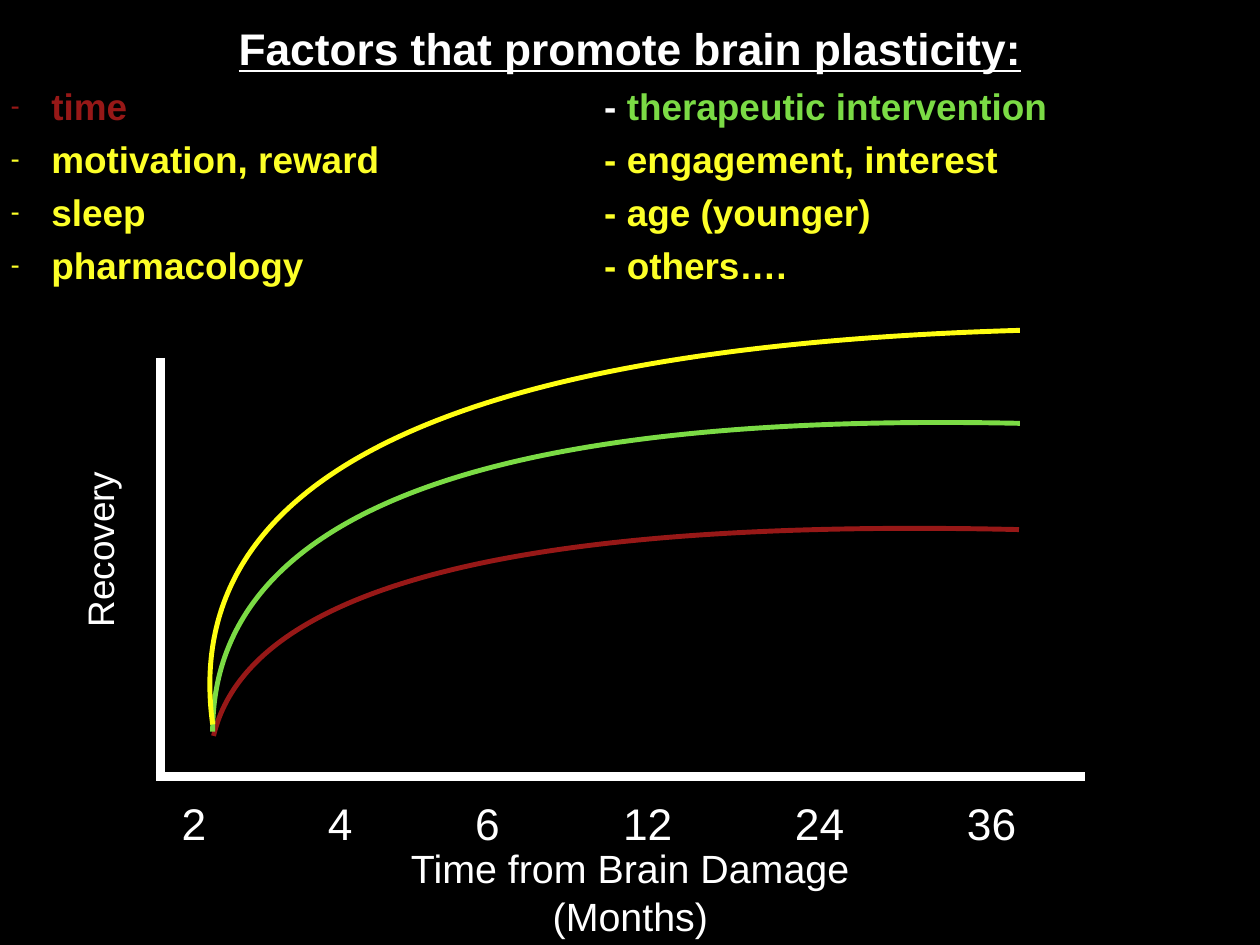
from dataclasses import dataclass

from lxml.etree import SubElement
from pptx import Presentation
from pptx.dml.color import RGBColor
from pptx.enum.shapes import MSO_CONNECTOR
from pptx.enum.text import MSO_ANCHOR, MSO_AUTO_SIZE, PP_ALIGN
from pptx.oxml.ns import qn
from pptx.shapes.autoshape import Shape
from pptx.slide import Slide
from pptx.text.text import TextFrame, _Paragraph, _Run
from pptx.util import Inches, Pt

WHITE = RGBColor(0xFF, 0xFF, 0xFF)
BLACK = RGBColor(0, 0, 0)
RED = RGBColor(0x97, 0x18, 0x17)
GREEN = RGBColor(0x7B, 0xDB, 0x45)
YELLOW = RGBColor(0xFD, 0xFF, 0x28)
LEMON = RGBColor(0xFF, 0xFE, 0x12)

Point = tuple[float, float]


@dataclass
class Factor:
    left: str
    right: str
    hue: RGBColor = YELLOW
    dash: RGBColor = YELLOW
    other: RGBColor = YELLOW


@dataclass
class Label:
    text: str
    box: tuple[float, float, float, float]
    size: int
    turn: int = 0


@dataclass
class Axis:
    start: Point
    end: Point


@dataclass
class Curve:
    start: Point
    bend: tuple[Point, Point]
    end: Point
    hue: RGBColor


FACTORS = [
    Factor("time", "therapeutic intervention", RED, WHITE, GREEN),
    Factor("motivation, reward", "engagement, interest"),
    Factor("sleep", "age (younger)"),
    Factor("pharmacology", "others…."),
]
LABELS = [
    Label("Recovery", (0.18, 5.9, 1.88, 0.61), 30, 270),
    Label("Time from Brain Damage (Months)", (3.64, 9.75, 6.95, 0.64), 32),
]
AXES = [Axis((1.76, 8.77), (12.24, 8.77)), Axis((1.81, 4.04), (1.81, 8.8))]
MONTHS = [2, 4, 6, 12, 24, 36]
STOPS = [1.79, 3.45, 5.26, 7.2, 9.14]
CURVES = [
    Curve((2.41, 8.31), ((2.81, 6.62), (5.84, 5.85)), (11.5, 5.98), RED),
    Curve((2.4, 8.26), ((2.4, 5.81), (5.43, 4.65)), (11.51, 4.78), GREEN),
    Curve((2.4, 8.18), ((2.02, 5.4), (5.05, 3.92)), (11.51, 3.73), LEMON),
]
COLUMN = 6.7
INDENT = 0.46


def add_box(slide: Slide, box: tuple[float, ...], wrap: bool, turn: int = 0) -> TextFrame:
    shape = slide.shapes.add_textbox(*map(Inches, box))
    shape.rotation = turn
    frame = shape.text_frame
    style = dict.fromkeys(
        ("margin_left", "margin_right", "margin_top", "margin_bottom"), Inches(0.06)
    )
    style |= {
        "word_wrap": wrap,
        "auto_size": MSO_AUTO_SIZE.SHAPE_TO_FIT_TEXT,
        "vertical_anchor": MSO_ANCHOR.MIDDLE,
    }
    for name, value in style.items():
        setattr(frame, name, value)
    return frame


def add_run(para: _Paragraph, text: str, size: int, hue: RGBColor, **extra: bool) -> _Run:
    run = para.add_run()
    run.text = text
    style = {"name": "Arial", "size": Pt(size)} | extra
    for name, value in style.items():
        setattr(run.font, name, value)
    run.font.color.rgb = hue
    return run


def add_tabs(para: _Paragraph, stops: list[float], align: str) -> None:
    tabs = SubElement(para._p.get_or_add_pPr(), qn("a:tabLst"))
    for stop in stops:
        SubElement(tabs, qn("a:tab"), pos=str(Inches(stop)), algn=align)


def add_dash(para: _Paragraph) -> None:
    """Give the paragraph a hanging, smaller dash as its bullet."""
    props = para._p.get_or_add_pPr()
    props.set("marL", str(Inches(INDENT)))
    props.set("indent", str(-Inches(INDENT)))
    SubElement(props, qn("a:buSzPct"), val="75000")
    SubElement(props, qn("a:buFont"), typeface="Arial")
    SubElement(props, qn("a:buChar"), char="-")


def add_factors(slide: Slide) -> None:
    frame = add_box(slide, (0.06, 0.12, 14.1, 3.13), True)
    title = frame.paragraphs[0]
    title.alignment = PP_ALIGN.CENTER
    title.line_spacing = 1.2
    add_run(title, "Factors that promote brain plasticity:", 36, WHITE,
            bold=True, underline=True)
    for factor in FACTORS:
        para = frame.add_paragraph()
        para.line_spacing = 1.2
        add_dash(para)
        add_tabs(para, [COLUMN], "l")
        for text, hue in (
            (factor.left, factor.hue),
            ("\t- ", factor.dash),
            (factor.right, factor.other),
        ):
            add_run(para, text, 30, hue, bold=True)


def add_label(slide: Slide, label: Label) -> None:
    para = add_box(slide, label.box, False, label.turn).paragraphs[0]
    para.alignment = PP_ALIGN.CENTER
    add_run(para, label.text, label.size, WHITE)


def add_months(slide: Slide) -> None:
    para = add_box(slide, (1.99, 8.93, 9.58, 0.71), True).paragraphs[0]
    add_tabs(para, STOPS, "ctr")
    add_run(para, "\t".join(map(str, MONTHS)), 36, WHITE)


def add_axis(slide: Slide, axis: Axis) -> None:
    line = slide.shapes.add_connector(
        MSO_CONNECTOR.STRAIGHT, *map(Inches, axis.start + axis.end)
    )
    line.line.color.rgb = WHITE
    line.line.width = Pt(7)
    SubElement(line._element.spPr, qn("a:effectLst"))


def add_curve(slide: Slide, curve: Curve) -> Shape:
    """Draw a straight path, then bend it into one cubic segment."""
    pen = slide.shapes.build_freeform(*map(Inches, curve.start))
    pen.add_line_segments([tuple(map(Inches, curve.end))], close=False)
    shape = pen.convert_to_shape()
    step = next(shape._element.iter(qn("a:lnTo")))
    step.tag = qn("a:cubicBezTo")
    for spot, (x, y) in enumerate(curve.bend):
        mark = step.makeelement(
            qn("a:pt"),
            {"x": str(Inches(x) - shape.left), "y": str(Inches(y) - shape.top)},
        )
        step.insert(spot, mark)
    shape.fill.background()
    shape.line.color.rgb = curve.hue
    shape.line.width = Pt(4)
    shape.shadow.inherit = False
    return shape


def main() -> None:
    deck = Presentation()
    deck.slide_width = Inches(14.22)
    deck.slide_height = Inches(10.67)
    slide = deck.slides.add_slide(deck.slide_layouts[6])
    slide.background.fill.solid()
    slide.background.fill.fore_color.rgb = BLACK
    add_factors(slide)
    for label in LABELS:
        add_label(slide, label)
    for axis in AXES:
        add_axis(slide, axis)
    add_months(slide)
    for curve in CURVES:
        add_curve(slide, curve)
    deck.save("out.pptx")


if __name__ == "__main__":
    main()
